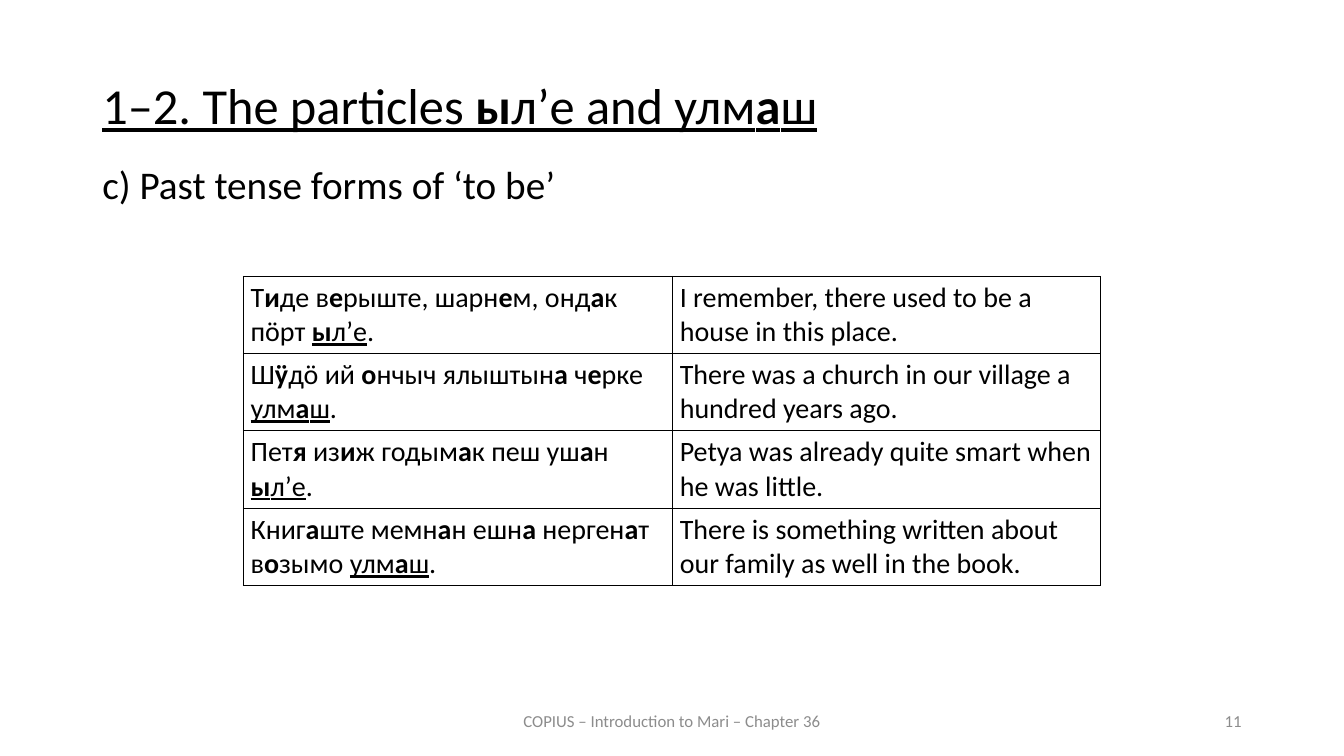
from dataclasses import dataclass
from itertools import product

from lxml.etree import SubElement
from pptx import Presentation
from pptx.dml.color import RGBColor as Rgb
from pptx.enum.text import MSO_ANCHOR as Anchor, PP_ALIGN as Align
from pptx.oxml.ns import qn
from pptx.util import Inches, Pt


@dataclass(frozen=True)
class Theme:
    font: str = "Calibri"
    ink: str = "000000"
    muted: str = "8C8C8C"
    paper: str = "FFFFFF"
    title: int = 36
    subtitle: int = 28
    body: int = 20
    footer: int = 12
    border: int = 1


THEME = Theme()
WIDTH, HEIGHT = Inches(13.333), Inches(7.5)
COLUMNS, ROWS = 160, 90
BOLD, UNDERLINE = "*", "_"

TITLE = "_1–2. The particles *ы*л’е and улм*а*ш_"
SUBTITLE = "c) Past tense forms of ‘to be’"
FOOTER = "COPIUS – Introduction to Mari – Chapter 36"
PAGE_NUMBER = "11"
EXAMPLES = [
    ("Т*и*де в*е*рыште, шарн*е*м, онд*а*к пӧрт _*ы*л’е_.",
     "I remember, there used to be a house in this place."),
    ("Ш*ӱ*дӧ ий *о*нчыч ялыштын*а* ч*е*рке _улм*а*ш_.",
     "There was a church in our village a hundred years ago."),
    ("Пет*я* из*и*ж годым*а*к пеш уш*а*н _*ы*л’е_.",
     "Petya was already quite smart when he was little."),
    ("Книг*а*ште мемн*а*н ешн*а *нерген*а*т в*о*зымо _улм*а*ш_.",
     "There is something written about our family as well in the book."),
]


def across(columns):
    return round(WIDTH * columns / COLUMNS)


def down(rows):
    return round(HEIGHT * rows / ROWS)


def place(left, top, width, height):
    return across(left), down(top), across(width), down(height)


def styled_parts(marked):
    bold = underline = False
    for underlined in marked.split(UNDERLINE):
        for text in underlined.split(BOLD):
            if text:
                yield text, bold, underline
            bold = not bold
        bold = not bold
        underline = not underline


def write(para, marked, size, color):
    for text, bold, underline in styled_parts(marked):
        span = para.add_run()
        span.text = text
        span.font.name = THEME.font
        span.font.size = Pt(size)
        span.font.bold = bold
        span.font.underline = underline
        span.font.color.rgb = Rgb.from_string(color)


def add_text(page, area, marked, size, color=THEME.ink, align=Align.LEFT,
             anchor=Anchor.TOP, spacing=1.0, before=0):
    frame = page.shapes.add_textbox(*place(*area)).text_frame
    frame.word_wrap = True
    frame.vertical_anchor = anchor
    para = frame.paragraphs[0]
    para.alignment = align
    para.line_spacing = spacing
    para.space_before = Pt(before)
    write(para, marked, size, color)


def add_borders(cell):
    properties = cell._tc.get_or_add_tcPr()
    for position, side in enumerate(("a:lnL", "a:lnR", "a:lnT", "a:lnB")):
        line = SubElement(properties, qn(side), w=str(Pt(THEME.border)))
        fill = SubElement(line, qn("a:solidFill"))
        SubElement(fill, qn("a:srgbClr"), val=THEME.ink)
        properties.insert(position, line)


def add_examples(page, left, top, widths, row_height):
    area = place(left, top, sum(widths), row_height * len(EXAMPLES))
    table = page.shapes.add_table(len(EXAMPLES), len(widths), *area).table
    table.first_row = table.horz_banding = False
    for column, width in zip(table.columns, widths):
        column.width = across(width)
    for row in table.rows:
        row.height = down(row_height)
    for row, column in product(range(len(EXAMPLES)), range(len(widths))):
        cell = table.cell(row, column)
        cell.fill.solid()
        cell.fill.fore_color.rgb = Rgb.from_string(THEME.paper)
        cell.vertical_anchor = Anchor.MIDDLE
        cell.margin_left = cell.margin_right = Inches(0.07)
        cell.margin_top = cell.margin_bottom = 0
        write(cell.text_frame.paragraphs[0], EXAMPLES[row][column],
              THEME.body, THEME.ink)
        add_borders(cell)


def add_footer(page, left, width, text, align):
    add_text(page, (left, 83.4, width, 4.8), text, THEME.footer,
             THEME.muted, align, Anchor.MIDDLE)


def main():
    deck = Presentation()
    deck.slide_width, deck.slide_height = WIDTH, HEIGHT
    page = deck.slides.add_slide(deck.slide_layouts[6])
    add_text(page, (11, 9.1, 138, 10), TITLE, THEME.title,
             align=Align.JUSTIFY, spacing=0.9, before=12)
    add_footer(page, 53, 54, FOOTER, Align.CENTER)
    add_footer(page, 113, 36, PAGE_NUMBER, Align.RIGHT)
    add_text(page, (11, 19.1, 138, 6.5), SUBTITLE, THEME.subtitle,
             spacing=0.9, before=10)
    add_examples(page, 29, 32.9, (51.1, 50.9), 9.2)
    deck.save("out.pptx")


if __name__ == "__main__":
    main()
